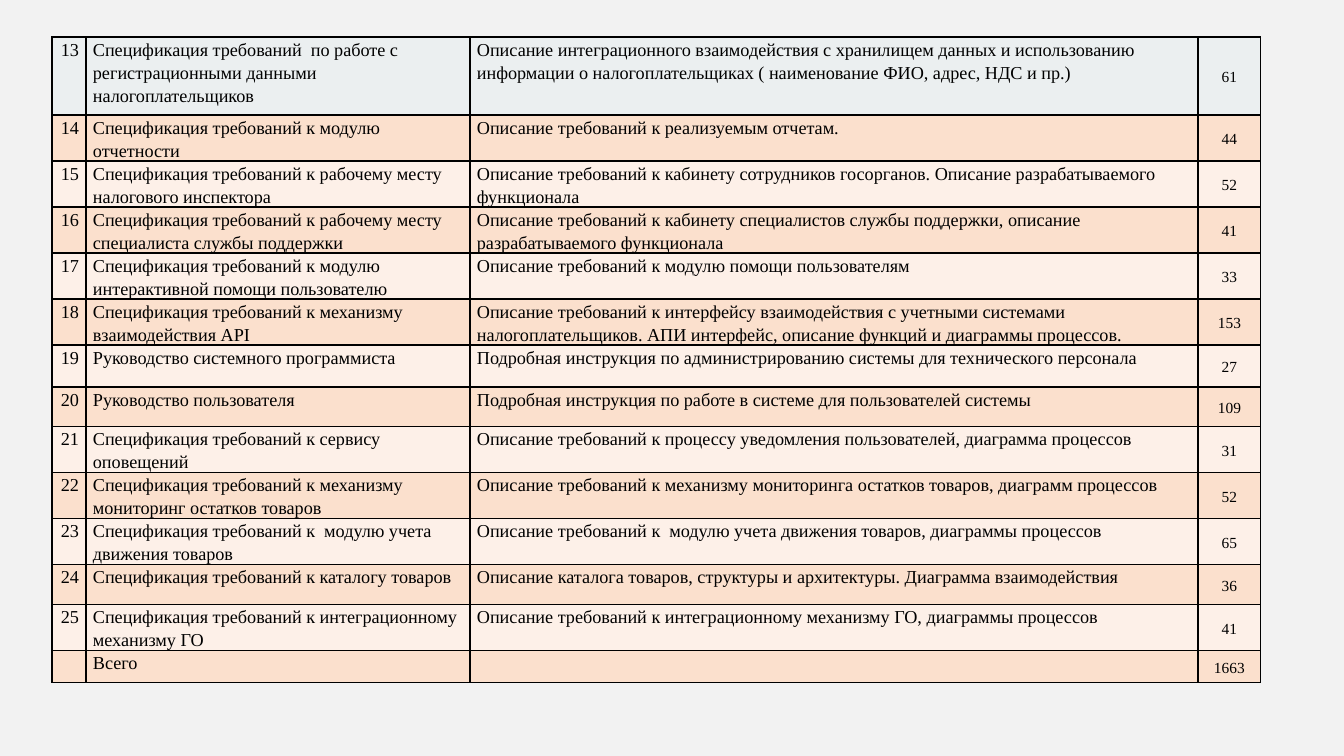
from lxml import etree
from pptx import Presentation
from pptx.dml.color import RGBColor
from pptx.enum.text import MSO_ANCHOR, PP_ALIGN
from pptx.oxml.ns import qn
from pptx.util import Pt

LEFT, CENTER, RIGHT = PP_ALIGN.LEFT, PP_ALIGN.CENTER, PP_ALIGN.RIGHT
TOP, MIDDLE = MSO_ANCHOR.TOP, MSO_ANCHOR.MIDDLE
PX = 914400 / 100.8
COLORS = {
    "background": "F2F2F2",
    "ink": "000000",
    "first": "EBEFF0",
    "dark": "FBE0CD",
    "light": "FDF0E8",
}

COLUMN_WIDTHS = [34, 384, 728, 63]
ROW_HEIGHTS = [78, 42, 40, 42, 42, 42, 42, 40, 42, 40, 40, 40, 32, 32]
COLUMN_FORMATS = [
    {"align": RIGHT},
    {"align": LEFT},
    {"align": LEFT},
    {"align": CENTER, "size": 11, "anchor": MIDDLE},
]
DOCUMENTS = [
    ("13", "Спецификация требований  по работе с регистрационными данными налогоплательщиков",
     "Описание интеграционного взаимодействия с хранилищем данных и использованию информации "
     "о налогоплательщиках ( наименование ФИО, адрес, НДС и пр.)", "61"),
    ("14", "Спецификация требований к модулю отчетности",
     "Описание требований к реализуемым отчетам.", "44"),
    ("15", "Спецификация требований к рабочему месту налогового инспектора",
     "Описание требований к кабинету сотрудников госорганов. "
     "Описание разрабатываемого функционала", "52"),
    ("16", "Спецификация требований к рабочему месту специалиста службы поддержки",
     "Описание требований к кабинету специалистов службы поддержки, "
     "описание разрабатываемого функционала", "41"),
    ("17", "Спецификация требований к модулю интерактивной помощи пользователю",
     "Описание требований к модулю помощи пользователям", "33"),
    ("18", "Спецификация требований к механизму взаимодействия API",
     "Описание требований к интерфейсу взаимодействия с учетными системами налогоплательщиков. "
     "АПИ интерфейс, описание функций и диаграммы процессов.", "153"),
    ("19", "Руководство системного программиста",
     "Подробная инструкция по администрированию системы для технического персонала", "27"),
    ("20", "Руководство пользователя",
     "Подробная инструкция по работе в системе для пользователей системы", "109"),
    ("21", "Спецификация требований к сервису оповещений",
     "Описание требований к процессу уведомления пользователей, диаграмма процессов", "31"),
    ("22", "Спецификация требований к механизму мониторинг остатков товаров",
     "Описание требований к механизму мониторинга остатков товаров, диаграмм процессов", "52"),
    ("23", "Спецификация требований к  модулю учета движения товаров",
     "Описание требований к  модулю учета движения товаров, диаграммы процессов", "65"),
    ("24", "Спецификация требований к каталогу товаров",
     "Описание каталога товаров, структуры и архитектуры. Диаграмма взаимодействия", "36"),
    ("25", "Спецификация требований к интеграционному механизму ГО",
     "Описание требований к интеграционному механизму ГО, диаграммы процессов", "41"),
    ("", "Всего", "", "1663"),
]


def px(n):
    return round(n * PX)


def rgb(name):
    return RGBColor.from_string(COLORS[name])


def write(tf, text, font="Times New Roman", size=13, color="ink", align=LEFT, spacing=1.15):
    p = tf.paragraphs[0]
    p.alignment = align
    p.line_spacing = spacing
    if not text:
        p._p.get_or_add_endParaRPr().set("sz", str(size * 100))
        return
    r = p.add_run()
    r.text = text
    r.font.name = font
    r.font.size = Pt(size)
    r.font.color.rgb = rgb(color)


class SlideBuilder:
    def __init__(self, prs, background="background", border="ink", border_width=1):
        self.s = prs.slides.add_slide(prs.slide_layouts[6])
        self.s.background.fill.solid()
        self.s.background.fill.fore_color.rgb = rgb(background)
        self.border = border
        self.border_width = border_width

    def borders(self, cell):
        tcPr = cell._tc.get_or_add_tcPr()
        for i, side in enumerate(("a:lnL", "a:lnR", "a:lnT", "a:lnB")):
            ln = etree.Element(qn(side), w=str(Pt(self.border_width)))
            fill = etree.SubElement(ln, qn("a:solidFill"))
            etree.SubElement(fill, qn("a:srgbClr"), val=COLORS[self.border])
            tcPr.insert(i, ln)

    def cell(self, cell, text, fill, anchor=TOP, **fmt):
        cell.margin_left = cell.margin_right = px(7)
        cell.margin_top = cell.margin_bottom = 0
        cell.vertical_anchor = anchor
        cell.fill.solid()
        cell.fill.fore_color.rgb = rgb(fill)
        self.borders(cell)
        write(cell.text_frame, text, **fmt)

    def table(self, x, y, h, rows, widths, heights, formats, fills):
        sp = self.s.shapes.add_table(len(rows), len(widths), px(x), px(y), px(sum(widths)), px(h))
        table = sp.table
        table.first_row = table.horz_banding = False
        for column, width in zip(table.columns, widths):
            column.width = px(width)
        for i, (row, height) in enumerate(zip(table.rows, heights)):
            row.height = px(height)
            for cell, text, fmt in zip(row.cells, rows[i], formats):
                self.cell(cell, text, fills[i], **fmt)
        sp.height = px(h)


def main():
    prs = Presentation()
    prs.slide_width, prs.slide_height = px(1344), px(756)
    slide = SlideBuilder(prs)
    fills = ["first"] + [("dark", "light")[i % 2] for i in range(len(DOCUMENTS) - 1)]
    slide.table(52, 37, 684, DOCUMENTS, COLUMN_WIDTHS, ROW_HEIGHTS, COLUMN_FORMATS, fills)
    prs.save("out.pptx")


if __name__ == "__main__":
    main()
